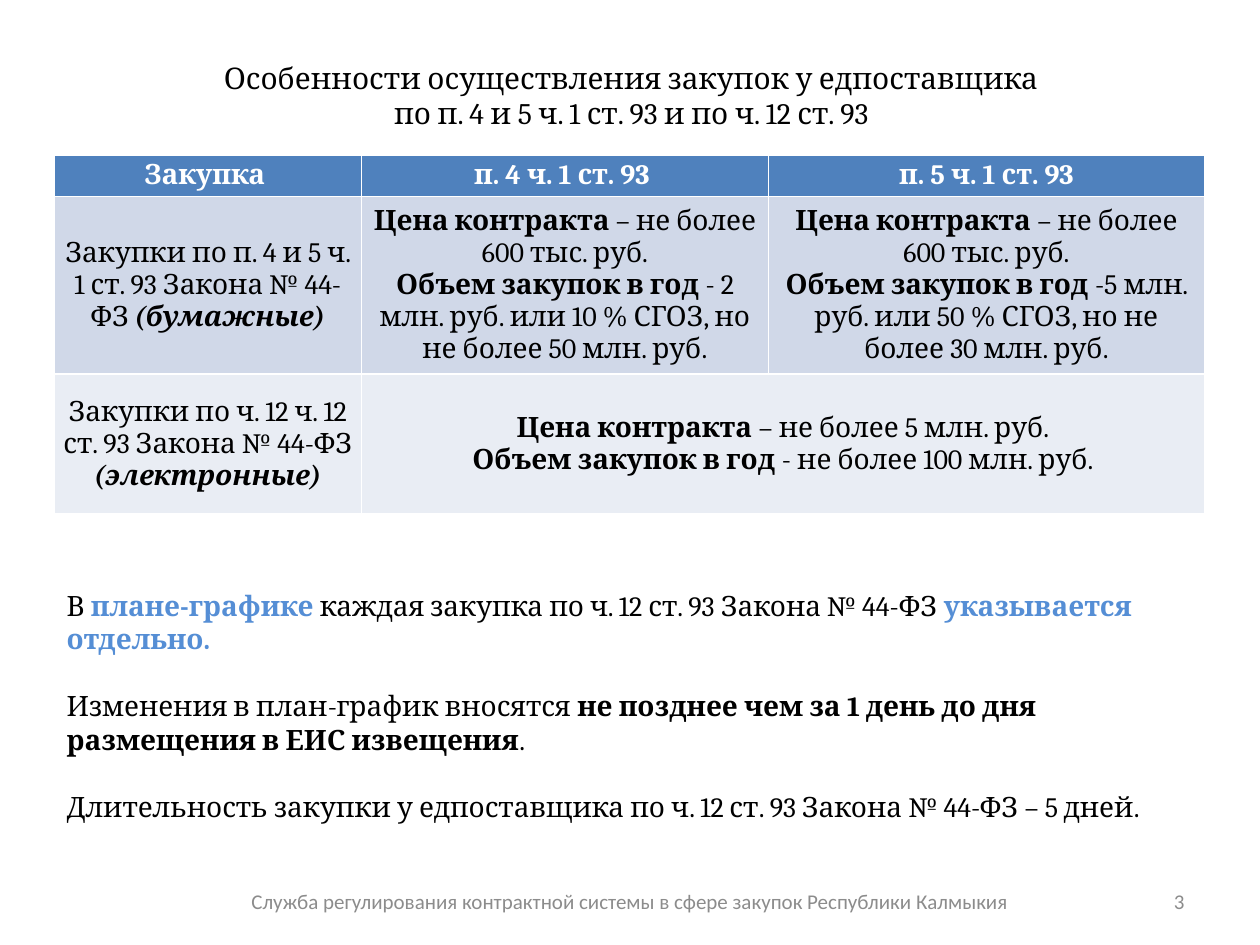
from pptx import Presentation
from pptx.dml.color import RGBColor
from pptx.enum.text import MSO_ANCHOR, MSO_AUTO_SIZE, PP_ALIGN
from pptx.util import Inches, Pt

LEFT, CENTER, RIGHT = PP_ALIGN.LEFT, PP_ALIGN.CENTER, PP_ALIGN.RIGHT
TOP, MIDDLE = MSO_ANCHOR.TOP, MSO_ANCHOR.MIDDLE
TITLE_ONLY = 5
COLS, ROWS = 10, 7.5
COLORS = {
    "text": "000000", "accent": "558ED5", "footer": "8C8C8C",
    "header_text": "FFFFFF", "header": "4F81BD",
    "band_dark": "D0D8E8", "band_light": "E9EDF4",
}


def rgb(name):
    return RGBColor.from_string(COLORS[name])


class Deck:
    """Holds the style and the current slide; places are (col, row, cols, rows) on the grid."""

    def __init__(self):
        self.prs = Presentation()
        self.prs.slide_width, self.prs.slide_height = Inches(10), Inches(7.5)
        self.font, self.size = "Cambria", 16
        self.slide = self.prs.slides.add_slide(self.prs.slide_layouts[TITLE_ONLY])

    def col(self, n):
        return round(self.prs.slide_width * n / COLS)

    def row(self, n):
        return round(self.prs.slide_height * n / ROWS)

    def place(self, at):
        x, y, w, h = at
        return self.col(x), self.row(y), self.col(w), self.row(h)

    def add_runs(self, tf, paragraphs, align=LEFT, color="text", size=None, font=None, gap=0):
        """Each paragraph is a list of (text, flags): b bold, i italic, a accent colour."""
        for n, runs in enumerate(paragraphs):
            p = tf.add_paragraph() if n else tf.paragraphs[0]
            p.alignment = align
            p.space_before = Pt(gap if n else 0)
            for text, flags in runs:
                if text == "\n":
                    p.add_line_break()
                    continue
                r = p.add_run()
                r.text = text
                r.font.name = font or self.font
                r.font.size = Pt(size or self.size)
                r.font.bold, r.font.italic = "b" in flags, "i" in flags
                r.font.color.rgb = rgb("accent" if "a" in flags else color)

    def title(self, at, runs):
        sp = self.slide.shapes.title
        sp.left, sp.top, sp.width, sp.height = self.place(at)
        tf = sp.text_frame
        tf.auto_size, tf.vertical_anchor = MSO_AUTO_SIZE.NONE, MIDDLE
        self.add_runs(tf, [runs], CENTER, size=17)

    def text(self, at, paragraphs, anchor=TOP, **style):
        tf = self.slide.shapes.add_textbox(*self.place(at)).text_frame
        tf.word_wrap, tf.vertical_anchor = True, anchor
        self.add_runs(tf, paragraphs, **style)

    def footer(self, at, text, align):
        self.text(at, [[(text, "")]], MIDDLE, align=align,
                  color="footer", size=12, font="Calibri")

    def table(self, x, y, widths, heights, rows, fills):
        """A None cell continues the cell to its left."""
        at = self.place((x, y, sum(widths), sum(heights)))
        table = self.slide.shapes.add_table(len(rows), len(widths), *at).table
        for column, width in zip(table.columns, widths):
            column.width = self.col(width)
        for i, (cells, height, fill) in enumerate(zip(rows, heights, fills)):
            table.rows[i].height = self.row(height)
            for j, paragraphs in enumerate(cells):
                cell = table.cell(i, j)
                if paragraphs is None:
                    table.cell(i, j - 1).merge(cell)
                    continue
                cell.fill.solid()
                cell.fill.fore_color.rgb = rgb(fill)
                cell.vertical_anchor = MIDDLE
                cell.margin_left = cell.margin_right = Inches(0.07)
                cell.margin_top = cell.margin_bottom = 0
                self.add_runs(cell.text_frame, paragraphs, CENTER,
                              "text" if i else "header_text")


def limits(price, volume):
    return [[("Цена контракта", "b"), (f" – не более {price} руб.", "")],
            [("Объем закупок в год", "b"), (volume, "")]]


def purchase(clause, form):
    return [[(f"Закупки по {clause} ст. 93 Закона № 44-ФЗ ", ""), (f"({form})", "bi")]]


def main():
    deck = Deck()
    deck.title((0.51, 0.44, 9, 0.63), [
        ("Особенности осуществления закупок у едпоставщика", ""), ("\n", ""),
        (" по п. 4 и 5 ч. 1 ст. 93 и по ч. 12 ст. 93 ", "")])

    headers = ["Закупка ", "п. 4 ч. 1 ст. 93 ", "п. 5 ч. 1 ст. 93"]
    deck.table(0.43, 1.23, [2.44, 3.23, 3.46], [0.33, 1.41, 1.11], [
        [[[(header, "b")]] for header in headers],
        [purchase("п. 4 и 5 ч. 1", "бумажные"),
         limits("600 тыс.", " - 2 млн. руб. или 10 % СГОЗ, но не более 50 млн. руб."),
         limits("600 тыс.", " -5 млн. руб. или 50 % СГОЗ, но не более 30 млн. руб.")],
        [purchase("ч. 12 ч. 12", "электронные"),
         limits("5 млн.", " - не более 100 млн. руб."), None],
    ], ["header", "band_dark", "band_light"])

    deck.text((0.43, 4.62, 9.29, 1.72), [
        [("В ", ""), ("плане-графике", "ba"),
         (" каждая закупка по ч. 12 ст. 93 Закона № 44-ФЗ ", ""),
         ("указывается отдельно.", "ba")],
        [("Изменения в план-график вносятся ", ""),
         ("не позднее чем за 1 день до дня размещения в ЕИС извещения", "b"), (".", "")],
        [("Длительность закупки у едпоставщика по ч. 12 ст. 93 Закона № 44-ФЗ – 5 дней.", "")],
    ], gap=19)

    deck.footer((0, 6.95, 10, 0.4), "Служба регулирования контрактной системы "
                "в сфере закупок Республики Калмыкия", CENTER)
    deck.footer((7.17, 6.95, 2.33, 0.4), "3", RIGHT)
    deck.prs.save("out.pptx")


if __name__ == "__main__":
    main()
